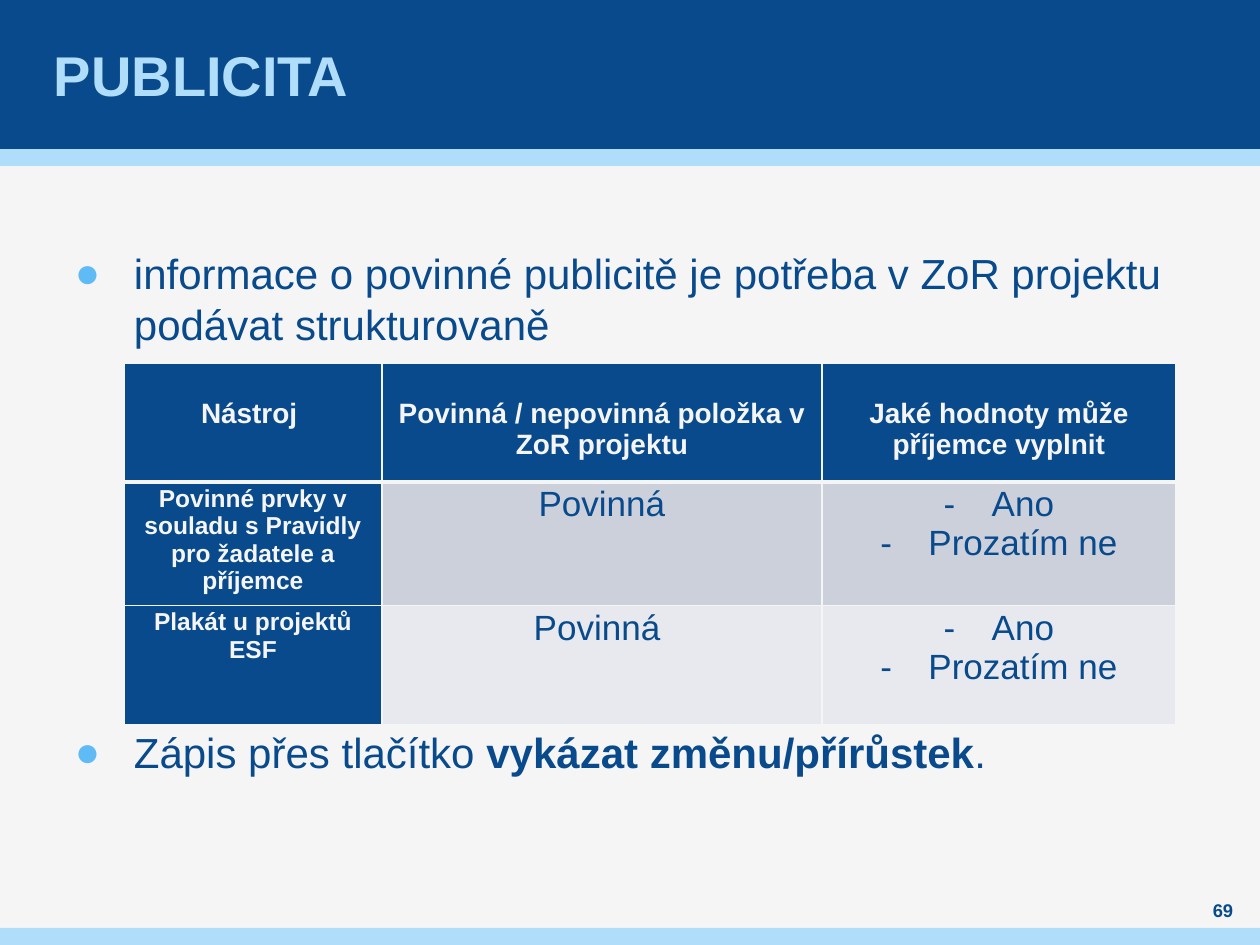
from lxml import etree
from pptx import Presentation
from pptx.dml.color import RGBColor
from pptx.enum.shapes import MSO_SHAPE
from pptx.enum.text import MSO_ANCHOR, PP_ALIGN
from pptx.oxml.ns import qn
from pptx.util import Emu, Pt

RECTANGLE = MSO_SHAPE.RECTANGLE
TOP, MIDDLE = MSO_ANCHOR.TOP, MSO_ANCHOR.MIDDLE
LEFT, CENTER = PP_ALIGN.LEFT, PP_ALIGN.CENTER
PX_PER_INCH = 126
FONT = "Arial"
COLORS = {
    "paper": "F5F5F5",
    "navy": "084A8B",
    "sky": "AFDDFA",
    "bullet": "5FBBF5",
    "band_dark": "CCD0DA",
    "band_light": "E7E9EE",
}
COLUMN_WIDTHS = [258, 440, 354]
ROW_HEIGHT = 119
HEADERS = ["Nástroj ", "Povinná / nepovinná položka v ZoR projektu",
           "Jaké hodnoty může příjemce vyplnit"]
TOOLS = [
    ("Povinné prvky v souladu s Pravidly pro žadatele a příjemce", "Povinná", "band_dark"),
    ("Plakát u projektů ESF", "Povinná ", "band_light"),
]
ANSWERS = ["Ano", "Prozatím ne"]


def px(length):
    """Turn pixels into EMU."""
    return Emu(round(length * 914400 / PX_PER_INCH))


def rgb(name):
    """Look up a named colour."""
    return RGBColor.from_string(COLORS[name])


def add_bar(page, top, height, color):
    """Add a full-width bar without outline."""
    bar = page.shapes.add_shape(RECTANGLE, 0, px(top), px(1260), px(height))
    bar.shadow.inherit = False
    bar.fill.solid()
    bar.fill.fore_color.rgb = rgb(color)
    bar.line.fill.background()


def add_box(page, left, top, width, height, anchor=TOP, side=0):
    """Add a wrapping text box and return its text frame."""
    frame = page.shapes.add_textbox(px(left), px(top), px(width), px(height)).text_frame
    frame.word_wrap = True
    frame.vertical_anchor = anchor
    frame.margin_left = frame.margin_right = px(side)
    frame.margin_top = frame.margin_bottom = 0
    return frame


def add_span(para, text, size, color="navy", bold=False):
    """Add one formatted run."""
    span = para.add_run()
    span.text = text
    span.font.name = FONT
    span.font.size = Pt(size)
    span.font.bold = bold
    span.font.color.rgb = rgb(color)


def set_bullet(para, char, indent, color=None):
    """Give a paragraph a hanging bullet."""
    props = para._p.get_or_add_pPr()
    props.set("marL", str(px(indent)))
    props.set("indent", str(-px(indent)))
    if color:
        tint = etree.SubElement(props, qn("a:buClr"))
        etree.SubElement(tint, qn("a:srgbClr"), val=COLORS[color])
    etree.SubElement(props, qn("a:buFont"), typeface=FONT)
    etree.SubElement(props, qn("a:buChar"), char=char)


def write_text(frame, text, align=LEFT, **style):
    """Write one paragraph into an empty text frame."""
    para = frame.paragraphs[0]
    para.alignment = align
    add_span(para, text, **style)


def write_point(para, spans, before):
    """Write a main bullet point from (text, bold) spans."""
    para.line_spacing = Pt(28.8)
    para.space_before = Pt(before)
    para.space_after = Pt(6)
    set_bullet(para, "●", 59, "bullet")
    for text, bold in spans:
        add_span(para, text, 24, bold=bold)


def format_cell(cell, fill, top_width=1, bottom_width=1, margin_top=3):
    """Set the margins, borders and fill of a cell."""
    cell.margin_left = cell.margin_right = cell.margin_bottom = px(3)
    cell.margin_top = px(margin_top)
    props = cell._tc.get_or_add_tcPr()
    for tag, width in (("lnL", 1), ("lnR", 1), ("lnT", top_width), ("lnB", bottom_width)):
        line = etree.SubElement(props, qn(f"a:{tag}"), w=str(Pt(width)))
        solid = etree.SubElement(line, qn("a:solidFill"))
        etree.SubElement(solid, qn("a:srgbClr"), val=COLORS["paper"])
    cell.fill.solid()
    cell.fill.fore_color.rgb = rgb(fill)


def write_answers(frame):
    """List the possible answers with dashes."""
    for index, answer in enumerate(ANSWERS):
        para = frame.add_paragraph() if index else frame.paragraphs[0]
        para.alignment = CENTER
        set_bullet(para, "-", 48)
        add_span(para, answer, 20)


def add_tools_table(page):
    """Add the table of publicity tools."""
    row_count = len(TOOLS) + 1
    table = page.shapes.add_table(row_count, len(COLUMN_WIDTHS), px(124), px(363),
                                  px(sum(COLUMN_WIDTHS)), px(ROW_HEIGHT * row_count)).table
    table.horz_banding = False
    for column, width in zip(table.columns, COLUMN_WIDTHS):
        column.width = px(width)
    for row in table.rows:
        row.height = px(ROW_HEIGHT)
    for cell, header in zip(table.rows[0].cells, HEADERS):
        format_cell(cell, "navy", bottom_width=3, margin_top=35)
        write_text(cell.text_frame, header, CENTER, size=16, color="paper", bold=True)
    for index, (tool, duty, band) in enumerate(TOOLS, start=1):
        cells = list(table.rows[index].cells)
        for cell, fill in zip(cells, ("navy", band, band)):
            format_cell(cell, fill, top_width=3 if index == 1 else 1)
        write_text(cells[0].text_frame, tool, CENTER, size=14, color="paper", bold=True)
        write_text(cells[1].text_frame, duty, CENTER, size=20)
        write_answers(cells[2].text_frame)


def main():
    """Build the slide and save it."""
    deck = Presentation()
    deck.slide_width, deck.slide_height = px(1260), px(945)
    page = deck.slides.add_slide(deck.slide_layouts[6])
    page.background.fill.solid()
    page.background.fill.fore_color.rgb = rgb("paper")
    add_bar(page, 149, 17, "sky")
    add_bar(page, 0, 149, "navy")
    add_bar(page, 928, 17, "sky")

    title = add_box(page, 49, 0, 1160, 149, MIDDLE, side=5)
    write_text(title, "PUBLICITA", size=32, color="sky", bold=True)

    body = add_box(page, 75, 248, 1111, 595)
    write_point(body.paragraphs[0], [
        ("informace o povinné publicitě je potřeba v ZoR projektu podávat strukturovaně", False),
    ], before=6)
    write_point(body.add_paragraph(), [
        ("Zápis přes tlačítko ", False), ("vykázat změnu/přírůstek", True), (".", False),
    ], before=210)

    number = add_box(page, 1191, 898, 64, 25, MIDDLE)
    write_text(number, "69", CENTER, size=10.5, bold=True)
    add_tools_table(page)
    deck.save("out.pptx")


if __name__ == "__main__":
    main()
